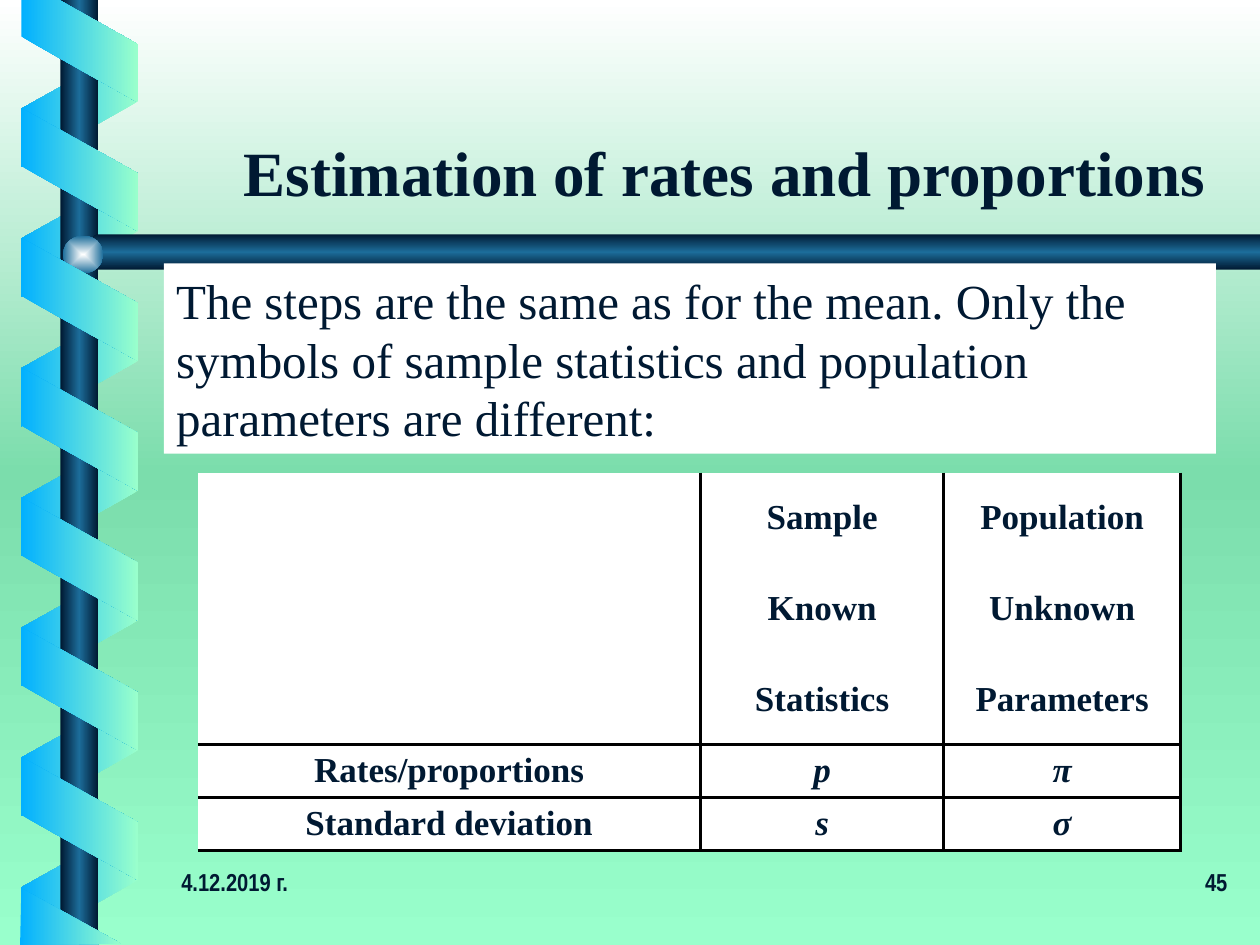
from lxml import etree
from pptx import Presentation
from pptx.dml.color import RGBColor
from pptx.enum.shapes import MSO_SHAPE
from pptx.enum.text import MSO_ANCHOR, MSO_AUTO_SIZE, PP_ALIGN
from pptx.oxml.ns import qn
from pptx.util import Inches, Pt

LEFT, CENTER, RIGHT = PP_ALIGN.LEFT, PP_ALIGN.CENTER, PP_ALIGN.RIGHT
TOP, MIDDLE, BOTTOM = MSO_ANCHOR.TOP, MSO_ANCHOR.MIDDLE, MSO_ANCHOR.BOTTOM
BAND, BAR = MSO_SHAPE.PARALLELOGRAM, MSO_SHAPE.RECTANGLE
ARROW, BALL = MSO_SHAPE.PENTAGON, MSO_SHAPE.OVAL
NO_FIT = MSO_AUTO_SIZE.NONE

NAVY = RGBColor(0x00, 0x19, 0x32)
STEEL = RGBColor(0x1C, 0x6D, 0x9A)
SKY = RGBColor(0x01, 0xB0, 0xFF)
MINT = RGBColor(0x99, 0xFF, 0xCC)
GREEN = RGBColor(0x7B, 0xDD, 0xAC)
WHITE = RGBColor(0xFF, 0xFF, 0xFF)
BLACK = RGBColor(0x00, 0x00, 0x00)
SERIF, NARROW = "Times New Roman", "Arial Narrow"

TITLE = "Estimation of rates and proportions"
INTRO = ("The steps are the same as for the mean. Only the symbols of sample "
         "statistics and population parameters are different:")
ROWS = [
    ("", "Sample", "Population"),
    ("", "Known", "Unknown"),
    ("", "Statistics", "Parameters"),
    ("Rates/proportions", "р", "π"),
    ("Standard deviation", "s", "σ"),
]
HEADER_ROWS = 3
COLUMN_WIDTHS = (3.99, 1.93, 1.88)
ROW_HEIGHTS = (0.72, 0.72, 0.72, 0.42, 0.42)
FOOTERS = [("4.12.2019 г.", 1.34, LEFT), ("45", 7.76, RIGHT)]

BAND_STEP = 1.03
RIBBON_ENDS = [
    [(0.17, 0), (0.17, 0.29), (1.09, 0.81), (1.09, 0.35), (0.47, 0)],
    [(0.96, 7.49), (0.17, 7.05), (0.16, 7.5)],
]


def paint_gradient(fill, element, colors, angle=None):
    fill.gradient()
    gradient = next(element.iter(qn("a:gradFill")))
    gradient.set("rotWithShape", "0")
    for child in list(gradient):
        gradient.remove(child)
    stops = etree.SubElement(gradient, qn("a:gsLst"))
    for index, color in enumerate(colors):
        position = 100000 * index // (len(colors) - 1)
        stop = etree.SubElement(stops, qn("a:gs"), pos=str(position))
        etree.SubElement(stop, qn("a:srgbClr"), val=str(color))
    if angle is None:
        focus = etree.SubElement(gradient, qn("a:path"), {"path": "shape"})
        middle = dict.fromkeys("ltrb", "50000")
        etree.SubElement(focus, qn("a:fillToRect"), middle)
    else:
        etree.SubElement(gradient, qn("a:lin"), ang=str(angle * 60000), scaled="0")


def finish(shape, colors, angle=None):
    shape.shadow.inherit = False
    shape.line.fill.background()
    paint_gradient(shape.fill, shape._element, colors, angle)


def add_part(page, kind, place, colors, angle=None, turn=0, flip=False, adjust=None):
    shape = page.shapes.add_shape(kind, *map(Inches, place))
    finish(shape, colors, angle)
    shape.rotation = turn
    if flip:
        shape._element.spPr.find(qn("a:xfrm")).set("flipH", "1")
    if adjust is not None:
        shape.adjustments[0] = adjust


def add_bands(page, count, first_top, colors, turn, flip):
    for index in range(count):
        place = (0.14, first_top + index * BAND_STEP, 0.98, 0.93)
        add_part(page, BAND, place, colors, 0, turn, flip, 0.56)


def write(frame, text, size, font=SERIF, align=LEFT, anchor=TOP, bold=False, italic=False):
    frame.word_wrap = True
    frame.vertical_anchor = anchor
    para = frame.paragraphs[0]
    para.alignment = align
    span = para.add_run()
    span.text = text
    span.font.size = Pt(size)
    span.font.name = font
    span.font.bold = bold
    span.font.italic = italic
    span.font.color.rgb = NAVY


def set_borders(cell, visible):
    properties = cell._tc.get_or_add_tcPr()
    for index, side in enumerate(("lnL", "lnR", "lnT", "lnB")):
        line = etree.Element(qn("a:" + side), w=str(Pt(2)))
        if side in visible:
            solid = etree.SubElement(line, qn("a:solidFill"))
            etree.SubElement(solid, qn("a:srgbClr"), val=str(BLACK))
        else:
            etree.SubElement(line, qn("a:noFill"))
        properties.insert(index, line)


def add_decoration(page):
    add_bands(page, 7, 0.37, (MINT, SKY), 90, True)
    steel_bar = (NAVY, STEEL, NAVY)
    add_part(page, BAR, (0.48, 0, 0.3, 7.5), steel_bar, 0)
    add_part(page, ARROW, (0.6, 1.86, 9.4, 0.28), steel_bar, 90, flip=True, adjust=0.59)
    add_part(page, BALL, (0.5, 1.87, 0.32, 0.3), (WHITE, STEEL))
    add_bands(page, 6, 0.88, (SKY, MINT), 270, False)
    for points in RIBBON_ENDS:
        corners = [(Inches(x), Inches(y)) for x, y in points]
        builder = page.shapes.build_freeform(*corners[0])
        builder.add_line_segments(corners[1:], close=True)
        finish(builder.convert_to_shape(), (SKY, MINT), 0)


def add_symbol_table(page):
    place = (1.57, 3.75, sum(COLUMN_WIDTHS), sum(ROW_HEIGHTS))
    table = page.shapes.add_table(len(ROWS), len(COLUMN_WIDTHS), *map(Inches, place)).table
    table.first_row = table.horz_banding = False
    for column, width in zip(table.columns, COLUMN_WIDTHS):
        column.width = Inches(width)
    for row_index, (texts, height) in enumerate(zip(ROWS, ROW_HEIGHTS)):
        table.rows[row_index].height = Inches(height)
        for column_index, text in enumerate(texts):
            cell = table.cell(row_index, column_index)
            cell.fill.solid()
            cell.fill.fore_color.rgb = WHITE
            cell.vertical_anchor = MIDDLE
            visible = {"lnR"}
            if column_index:
                visible.add("lnL")
            if row_index >= HEADER_ROWS:
                visible.add("lnT")
            if row_index >= HEADER_ROWS - 1:
                visible.add("lnB")
            set_borders(cell, visible)
            if text:
                symbol = row_index >= HEADER_ROWS and column_index > 0
                write(cell.text_frame, text, 20, align=CENTER, anchor=MIDDLE,
                      bold=True, italic=symbol)


def main():
    deck = Presentation()
    deck.slide_width, deck.slide_height = Inches(10), Inches(7.5)
    page = deck.slides.add_slide(deck.slide_layouts[5])
    paint_gradient(page.background.fill, page._element, (WHITE, GREEN, MINT), 90)
    add_decoration(page)

    title = page.shapes.title
    title.left, title.top, title.width, title.height = map(Inches, (1.5, 0.46, 8.5, 1.25))
    title.text_frame.auto_size = NO_FIT
    write(title.text_frame, TITLE, 36, align=CENTER, anchor=BOTTOM, bold=True)

    intro = page.shapes.add_shape(BAR, *map(Inches, (1.3, 2.09, 8.35, 1.51)))
    intro.shadow.inherit = False
    intro.fill.solid()
    intro.fill.fore_color.rgb = WHITE
    intro.line.fill.background()
    write(intro.text_frame, INTRO, 28, anchor=MIDDLE)

    add_symbol_table(page)
    for text, left, align in FOOTERS:
        box = page.shapes.add_textbox(*map(Inches, (left, 6.83, 2.08, 0.5)))
        write(box.text_frame, text, 14, NARROW, align, bold=True)
    deck.save("out.pptx")


if __name__ == "__main__":
    main()
